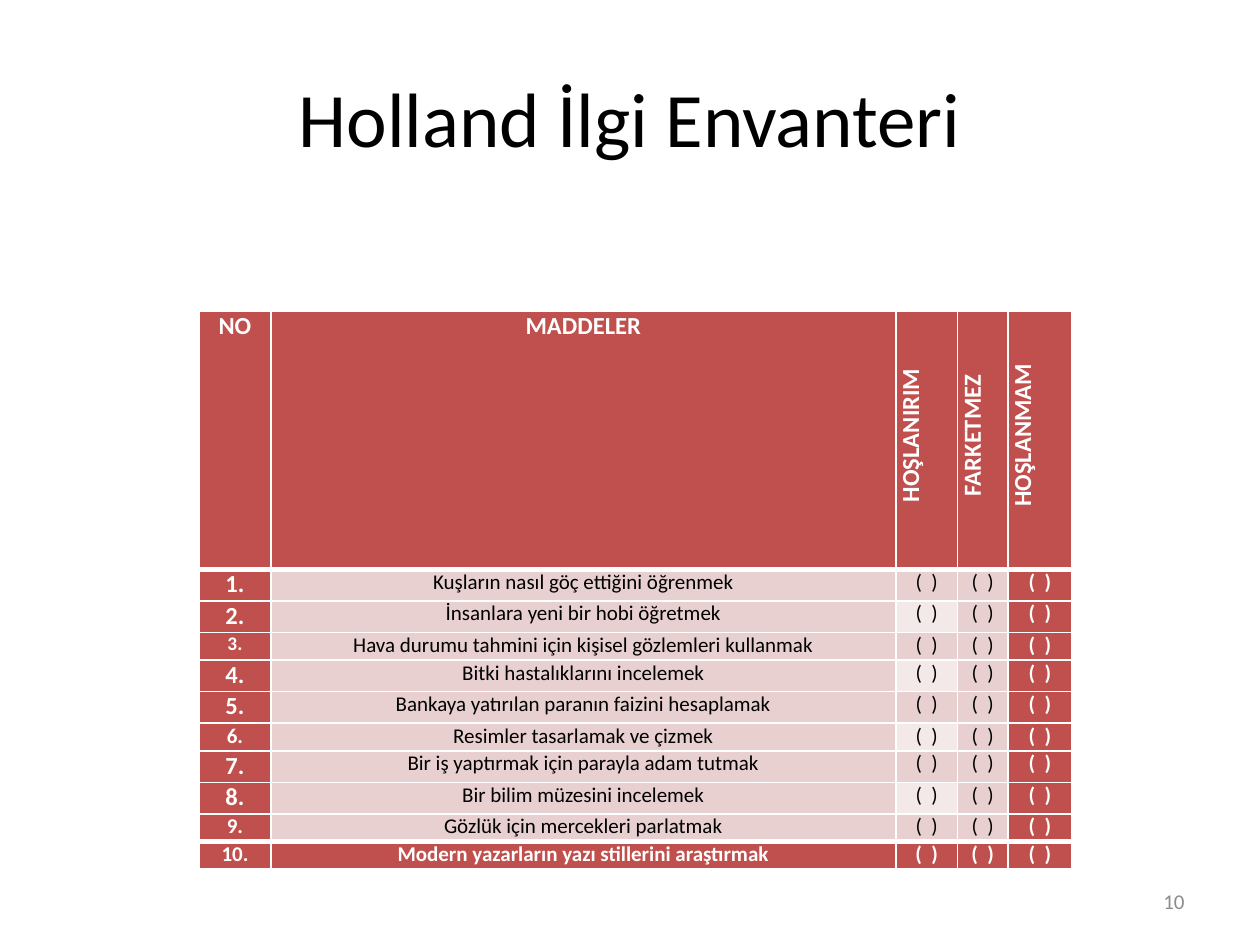
from dataclasses import dataclass

from lxml.etree import SubElement
from pptx import Presentation
from pptx.dml.color import RGBColor
from pptx.enum.text import MSO_ANCHOR, PP_ALIGN
from pptx.oxml.ns import qn
from pptx.util import Inches, Pt


@dataclass(frozen=True)
class Theme:
    font: str = "Calibri"
    black: str = "000000"
    white: str = "FFFFFF"
    gray: str = "8C8C8C"
    red: str = "C0504D"
    pink: str = "E8D0D0"
    pale_pink: str = "F4E9E9"
    title_size: int = 44
    header_size: int = 14
    body_size: int = 12
    small_size: int = 11
    thin_line: int = 1
    thick_line: int = 3


THEME = Theme()
HEADERS = ["NO", "MADDELER", "HOŞLANIRIM", "FARKETMEZ", "HOŞLANMAM"]
ITEMS = [
    "Kuşların nasıl göç ettiğini öğrenmek",
    "İnsanlara yeni bir hobi öğretmek",
    "Hava durumu tahmini için kişisel gözlemleri kullanmak",
    "Bitki hastalıklarını incelemek",
    "Bankaya yatırılan paranın faizini hesaplamak",
    "Resimler tasarlamak ve çizmek",
    "Bir iş yaptırmak için parayla adam tutmak",
    "Bir bilim müzesini incelemek",
    "Gözlük için mercekleri parlatmak",
    "Modern yazarların yazı stillerini araştırmak",
]
ANSWER = "(  )"
COLUMN_WIDTHS = [0.57, 4.96, 0.49, 0.4, 0.51]
HEADER_HEIGHT, TALL_ROW, SHORT_ROW = 2.05, 0.25, 0.22
NUMBER_SIZES = {3: THEME.small_size, 6: THEME.body_size, 9: THEME.body_size, 10: THEME.body_size}


def write_text(paragraph, text, size, color, alignment=PP_ALIGN.CENTER, bold=False):
    paragraph.text = text
    paragraph.alignment = alignment
    font = paragraph.font
    font.name, font.size, font.bold = THEME.font, Pt(size), bold
    font.color.rgb = RGBColor.from_string(color)


def add_label(slide, box, text, size, color, alignment):
    label = slide.shapes.add_textbox(*map(Inches, box))
    label.text_frame.word_wrap = True
    label.text_frame.vertical_anchor = MSO_ANCHOR.MIDDLE
    write_text(label.text_frame.paragraphs[0], text, size, color, alignment)


def set_borders(cell, top, bottom):
    properties = cell._tc.get_or_add_tcPr()
    widths = {"L": THEME.thin_line, "R": THEME.thin_line, "T": top, "B": bottom}
    for side, width in widths.items():
        line = SubElement(properties, qn(f"a:ln{side}"), w=str(Pt(width)))
        fill = SubElement(line, qn("a:solidFill"))
        SubElement(fill, qn("a:srgbClr"), val=THEME.white)


def fill_cell(cell, text, size, fill, bold, top=THEME.thin_line, bottom=THEME.thin_line):
    cell.margin_left = cell.margin_right = Inches(0.07)
    cell.margin_top = cell.margin_bottom = 0
    set_borders(cell, top, bottom)
    cell.fill.solid()
    cell.fill.fore_color.rgb = RGBColor.from_string(fill)
    color = THEME.white if bold else THEME.black
    write_text(cell.text_frame.paragraphs[0], text, size, color, bold=bold)


def turn_upward(cell):
    """Run the cell's text from bottom to top."""
    cell._tc.get_or_add_tcPr().set("vert", "vert270")
    cell.text_frame.paragraphs[0]._p.get_or_add_pPr().set("marL", str(Inches(0.08)))


def add_header_row(table):
    for column, heading in enumerate(HEADERS):
        cell = table.cell(0, column)
        fill_cell(cell, heading, THEME.header_size, THEME.red, True, bottom=THEME.thick_line)
        if column >= 2:
            turn_upward(cell)


def add_item_row(table, number, item):
    is_last = number == len(ITEMS)
    top = THEME.thick_line if number in (1, len(ITEMS)) else THEME.thin_line
    bottom = THEME.thick_line if number == len(ITEMS) - 1 else THEME.thin_line
    for column, text in enumerate([f"{number}.", item, ANSWER, ANSWER, ANSWER]):
        size = NUMBER_SIZES.get(number, THEME.header_size) if column == 0 else THEME.body_size
        strong = is_last or column in (0, len(HEADERS) - 1)
        if strong:
            fill = THEME.red
        elif column == 2 and number % 2 == 0:
            fill = THEME.pale_pink
        else:
            fill = THEME.pink
        fill_cell(table.cell(number, column), text, size, fill, strong, top, bottom)


def add_inventory_table(slide, box):
    row_heights = [HEADER_HEIGHT] + [
        SHORT_ROW if number in NUMBER_SIZES else TALL_ROW for number in range(1, len(ITEMS) + 1)
    ]
    frame = slide.shapes.add_table(len(row_heights), len(HEADERS), *map(Inches, box))
    table = frame.table
    table.first_row = table.horz_banding = False
    for column, width in zip(table.columns, COLUMN_WIDTHS):
        column.width = Inches(width)
    for row, height in zip(table.rows, row_heights):
        row.height = Inches(height)
    add_header_row(table)
    for number, item in enumerate(ITEMS, start=1):
        add_item_row(table, number, item)


def main():
    presentation = Presentation()
    presentation.slide_width, presentation.slide_height = Inches(10), Inches(7.5)
    slide = presentation.slides.add_slide(presentation.slide_layouts[6])
    add_label(slide, (0.5, 0.3, 9, 1.25), "Holland İlgi Envanteri",
              THEME.title_size, THEME.black, PP_ALIGN.CENTER)
    add_inventory_table(slide, (1.58, 2.47, 6.93, 4.46))
    add_label(slide, (7.17, 6.95, 2.33, 0.4), "10",
              THEME.body_size, THEME.gray, PP_ALIGN.RIGHT)
    presentation.save("out.pptx")


if __name__ == "__main__":
    main()
